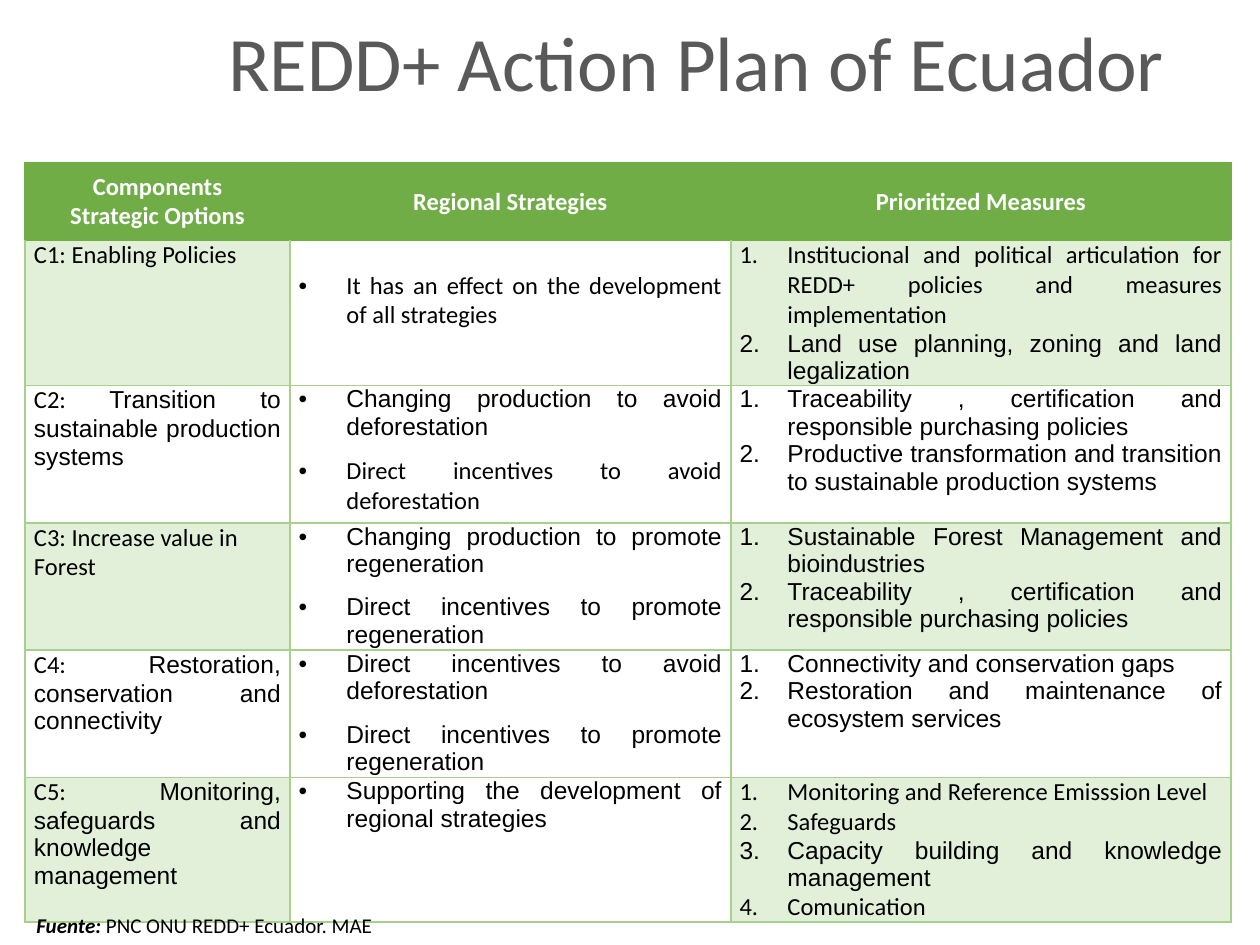
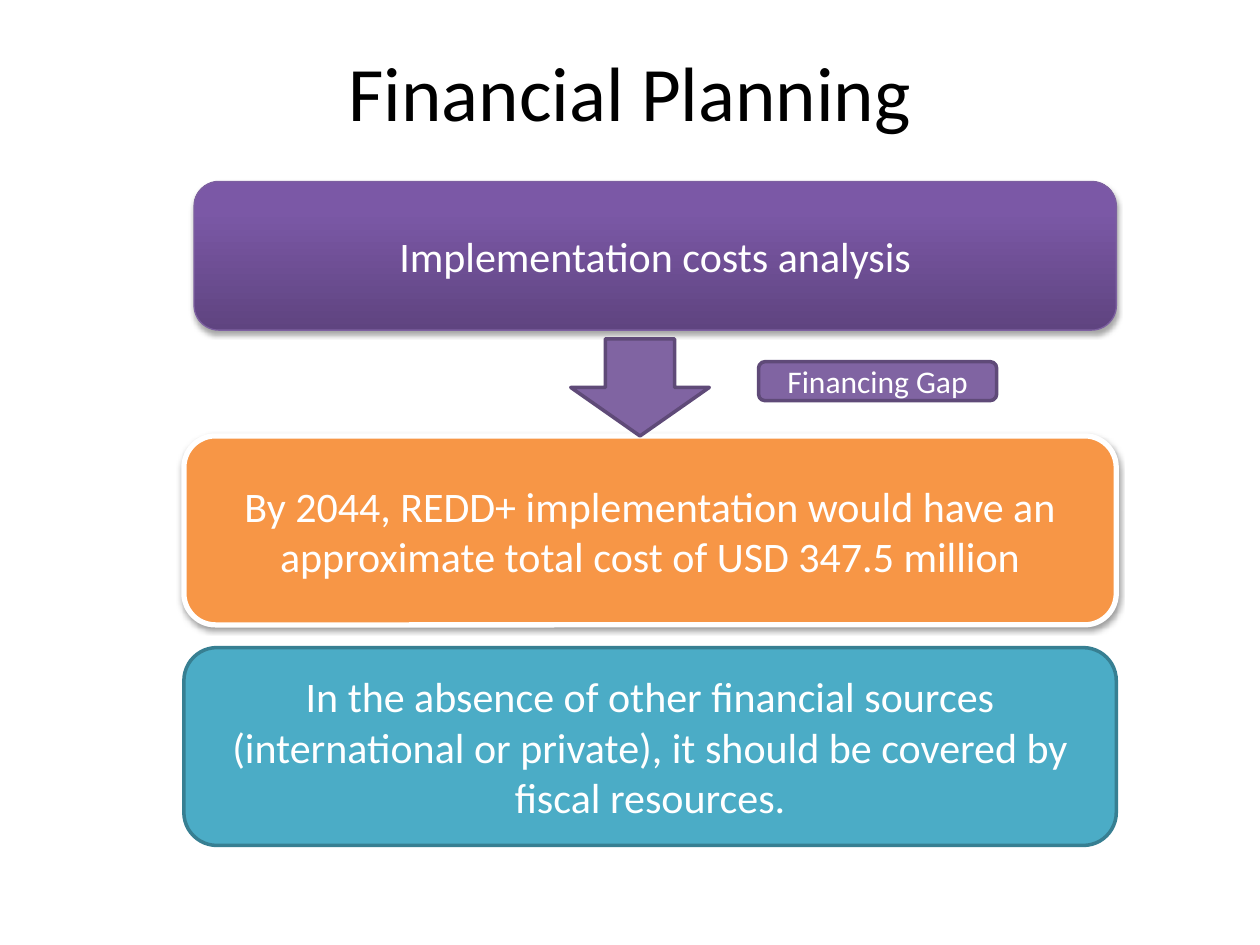
import copy
from dataclasses import dataclass
from typing import Optional

import lxml.etree
import pptx
import pptx.dml.color
import pptx.enum.shapes
import pptx.enum.text
import pptx.oxml.ns
import pptx.util

RGBColor = pptx.dml.color.RGBColor
ALIGN = pptx.enum.text.PP_ALIGN
ANCHOR = pptx.enum.text.MSO_ANCHOR
SHAPE = pptx.enum.shapes.MSO_SHAPE
qn = pptx.oxml.ns.qn

# Shared look
WHITE = RGBColor(0xFF, 0xFF, 0xFF)
BLACK = RGBColor(0x00, 0x00, 0x00)
GREY = RGBColor(0x59, 0x59, 0x59)
GREEN = RGBColor(0x70, 0xAD, 0x47)
GREEN_LINE = RGBColor(0xA8, 0xD0, 0x8D)
GREEN_PALE = RGBColor(0xE2, 0xEF, 0xD9)
PURPLE = RGBColor(0x80, 0x64, 0xA2)
PURPLE_LINE = RGBColor(0x5F, 0x4A, 0x78)
PURPLE_EDGE = RGBColor(0x7D, 0x60, 0xA0)
PURPLE_GRADIENT = [(0, RGBColor(0x5F, 0x44, 0x80)),
                   (0.8, RGBColor(0x7B, 0x58, 0xA6)),
                   (1, RGBColor(0x7C, 0x57, 0xA8))]
ORANGE = RGBColor(0xF7, 0x96, 0x46)
TEAL = RGBColor(0x4B, 0xAC, 0xC6)
TEAL_LINE = RGBColor(0x37, 0x7F, 0x92)
CALIBRI, ARIAL = "Calibri", "Arial"
TITLE_ONLY = 5


def px(length: int) -> int:
    """Lengths are in px, 100 to the inch."""
    return pptx.util.Emu(length * 9144)


@dataclass
class Item:
    text: str
    font: str = ARIAL
    lead: str = ""  # opening words, always in Calibri
    align: ALIGN = ALIGN.JUSTIFY


@dataclass
class Component:
    name: Item
    strategies: list[Item]
    measures: list[Item]
    height: int
    strategy_top: int = 0


@dataclass
class Block:
    left: int
    top: int
    width: int
    height: int
    line: RGBColor
    line_width: float
    fill: Optional[RGBColor] = None  # None means the purple gradient
    text: str = ""
    size: int = 24
    kind: SHAPE = SHAPE.ROUNDED_RECTANGLE
    shadow: Optional[tuple[int, float]] = None  # opacity in percent, distance in pt


HEADERS = [["Components", "Strategic Options"], ["Regional Strategies"],
           ["Prioritized Measures"]]
HEADER_HEIGHT = 62
COLUMN_WIDTHS = [210, 350, 397]

TRACEABILITY = Item("Traceability , certification and responsible purchasing policies")
AVOID = "Direct incentives to avoid deforestation"
REGENERATE = Item("Direct incentives to promote regeneration")

COMPONENTS = [
    Component(
        Item("C1: Enabling Policies", CALIBRI),
        [Item("It has an effect on the development of all strategies", CALIBRI)],
        [Item("Institucional and political articulation for REDD+ policies and "
              "measures implementation", CALIBRI),
         Item("Land use planning, zoning and land legalization")],
        115, strategy_top=24),
    Component(
        Item("Transition to sustainable production systems", lead="C2: "),
        [Item("Changing production to avoid deforestation"), Item(AVOID, CALIBRI)],
        [TRACEABILITY,
         Item("Productive transformation and transition to sustainable production systems")],
        109),
    Component(
        Item("C3: Increase value in Forest", CALIBRI, align=ALIGN.LEFT),
        [Item("Changing production to promote regeneration"), REGENERATE],
        [Item("Sustainable Forest Management and bioindustries"), TRACEABILITY],
        101),
    Component(
        Item("Restoration, conservation and connectivity", lead="C4: "),
        [Item(AVOID), REGENERATE],
        [Item("Connectivity and conservation gaps"),
         Item("Restoration and maintenance of ecosystem services")],
        101),
    Component(
        Item("Monitoring, safeguards and knowledge management", lead="C5: "),
        [Item("Supporting the development of regional strategies")],
        [Item("Monitoring and Reference Emisssion Level", CALIBRI),
         Item("Safeguards", CALIBRI),
         Item("Capacity building and knowledge management"),
         Item("Comunication", CALIBRI)],
        114),
]

BLOCKS = [
    Block(146, 346, 740, 150, WHITE, 3, ORANGE,
          "By 2044, REDD+ implementation would have an approximate total cost of "
          "USD 347.5 million", shadow=(38, 1.6)),
    Block(154, 144, 732, 118, PURPLE_EDGE, 0.75,
          text="Implementation costs analysis", shadow=(35, 1.8)),
    Block(453, 269, 110, 77, PURPLE_LINE, 2, PURPLE, kind=SHAPE.DOWN_ARROW),
    Block(602, 287, 189, 31, PURPLE_LINE, 2, PURPLE, "Financing Gap", size=18),
    Block(146, 514, 740, 157, TEAL_LINE, 2, TEAL,
          "In the absence of other financial sources (international or private), "
          "it should be covered by fiscal resources."),
]


# Text
def add_span(para, text: str, *, size: int, font: str = CALIBRI,
             color: RGBColor = BLACK, bold: bool = False, italic: bool = False) -> None:
    span = para.add_run()
    span.text = text
    span.font.name, span.font.size = font, pptx.util.Pt(size)
    span.font.bold, span.font.italic = bold, italic
    span.font.color.rgb = color


def add_para(frame, index: int, *, align: ALIGN = ALIGN.LEFT, after: int = 0):
    para = frame.paragraphs[0] if index == 0 else frame.add_paragraph()
    para.alignment, para.space_after = align, pptx.util.Pt(after)
    return para


def add_marker(para, tag: str, **attributes: str) -> None:
    """Hang the paragraph behind a bullet or an automatic number."""
    properties = para._p.get_or_add_pPr()
    properties.set("marL", str(px(38)))
    properties.set("indent", str(px(-38)))
    lxml.etree.SubElement(properties, qn("a:buFont"), typeface=ARIAL if tag == "buChar" else "+mj-lt")
    lxml.etree.SubElement(properties, qn(f"a:{tag}"), **attributes)


def set_title(page, text: str, area: tuple[int, int, int, int], *,
              color: RGBColor, spacing: float = 1.0) -> None:
    title = page.shapes.title
    title.left, title.top, title.width, title.height = map(px, area)
    frame = title.text_frame
    frame.auto_size = pptx.enum.text.MSO_AUTO_SIZE.NONE
    frame.vertical_anchor = ANCHOR.TOP
    para = add_para(frame, 0, align=ALIGN.CENTER)
    para.line_spacing = spacing
    add_span(para, text, size=44, color=color)


# Table
def style_cell(cell, fill: RGBColor, border: RGBColor, top_border: RGBColor,
               *, anchor: ANCHOR = ANCHOR.TOP, margin_top: int = 0) -> None:
    properties = cell._tc.get_or_add_tcPr()
    for side in "LRTB":
        line = lxml.etree.SubElement(properties, qn(f"a:ln{side}"), w="12700")
        solid = lxml.etree.SubElement(line, qn("a:solidFill"))
        color = top_border if side == "T" else border
        lxml.etree.SubElement(solid, qn("a:srgbClr"), val=str(color))
    cell.fill.solid()
    cell.fill.fore_color.rgb = fill
    cell.vertical_anchor = anchor
    cell.margin_left = cell.margin_right = px(7)
    cell.margin_top, cell.margin_bottom = px(margin_top), 0


def fill_cell(cell, items: list[Item], *, after: int = 0, tag: str = "",
              **marker: str) -> None:
    for index, item in enumerate(items):
        para = add_para(cell.text_frame, index, align=item.align, after=after)
        if tag:
            add_marker(para, tag, **marker)
        if item.lead:
            add_span(para, item.lead, size=14)
        add_span(para, item.text, size=14, font=item.font)


def add_plan_table(page) -> None:
    heights = [HEADER_HEIGHT] + [component.height for component in COMPONENTS]
    table = page.shapes.add_table(len(heights), len(COLUMN_WIDTHS), px(20), px(129),
                                  px(sum(COLUMN_WIDTHS)), px(sum(heights))).table
    table.horz_banding = False
    for column, width in zip(table.columns, COLUMN_WIDTHS):
        column.width = px(width)
    for row, height in zip(table.rows, heights):
        row.height = px(height)

    for column, lines in enumerate(HEADERS):
        cell = table.cell(0, column)
        style_cell(cell, GREEN, GREEN, GREEN, anchor=ANCHOR.MIDDLE)
        for index, line in enumerate(lines):
            para = add_para(cell.text_frame, index, align=ALIGN.CENTER)
            add_span(para, line, size=14, color=WHITE, bold=True)

    for row, component in enumerate(COMPONENTS, start=1):
        band = GREEN_PALE if row % 2 else WHITE
        top_border = GREEN if row == 1 else GREEN_LINE
        name, strategies, measures = (table.cell(row, column) for column in range(3))
        style_cell(name, band, GREEN_LINE, top_border)
        style_cell(strategies, WHITE, GREEN_LINE, top_border,
                   margin_top=component.strategy_top)
        style_cell(measures, band, GREEN_LINE, top_border)
        fill_cell(name, [component.name])
        fill_cell(strategies, component.strategies, after=9, tag="buChar", char="•")
        fill_cell(measures, component.measures, tag="buAutoNum", type="arabicPeriod")


# Diagram
def add_shadow(shape, opacity: int, distance: float) -> None:
    effects = shape._element.spPr.find(qn("a:effectLst"))
    outer = lxml.etree.SubElement(
        effects, qn("a:outerShdw"), blurRad=str(pptx.util.Pt(3.1)),
        dist=str(pptx.util.Pt(distance)), dir="5400000", rotWithShape="0")
    color = lxml.etree.SubElement(outer, qn("a:srgbClr"), val=str(BLACK))
    lxml.etree.SubElement(color, qn("a:alpha"), val=str(opacity * 1000))


def fill_gradient(shape) -> None:
    shape.fill.gradient()
    shape.fill.gradient_angle = 90
    stop_list = shape._element.spPr.find(".//" + qn("a:gsLst"))
    stop_list.append(copy.deepcopy(stop_list[0]))
    for stop, (position, color) in zip(shape.fill.gradient_stops, PURPLE_GRADIENT):
        stop.position, stop.color.rgb = position, color


def add_block(page, block: Block) -> None:
    shape = page.shapes.add_shape(block.kind, px(block.left), px(block.top),
                                  px(block.width), px(block.height))
    shape.shadow.inherit = False
    if block.fill is None:
        fill_gradient(shape)
    else:
        shape.fill.solid()
        shape.fill.fore_color.rgb = block.fill
    shape.line.color.rgb = block.line
    shape.line.width = pptx.util.Pt(block.line_width)
    if block.shadow:
        add_shadow(shape, *block.shadow)
    if block.text:
        frame = shape.text_frame
        frame.word_wrap, frame.vertical_anchor = True, ANCHOR.MIDDLE
        para = add_para(frame, 0, align=ALIGN.CENTER)
        add_span(para, block.text, size=block.size, color=WHITE)


# Slides
def build_action_plan(deck) -> None:
    page = deck.slides.add_slide(deck.slide_layouts[TITLE_ONLY])
    set_title(page, "REDD+ Action Plan of Ecuador", (114, 21, 878, 75),
              color=GREY, spacing=0.8)
    add_plan_table(page)
    source = page.shapes.add_textbox(px(19), px(719), px(290), px(30))
    source.text_frame.word_wrap = False
    para = add_para(source.text_frame, 0)
    add_span(para, "Fuente:", size=12, bold=True, italic=True)
    add_span(para, " PNC ONU REDD+ Ecuador. MAE", size=12)


def build_financial_planning(deck) -> None:
    page = deck.slides.add_slide(deck.slide_layouts[TITLE_ONLY])
    set_title(page, "Financial Planning", (50, 30, 900, 125), color=BLACK)
    for block in BLOCKS:
        add_block(page, block)


def main() -> None:
    deck = pptx.Presentation()
    deck.slide_width, deck.slide_height = px(1000), px(750)
    build_action_plan(deck)
    build_financial_planning(deck)
    deck.save("out.pptx")


if __name__ == "__main__":
    main()
